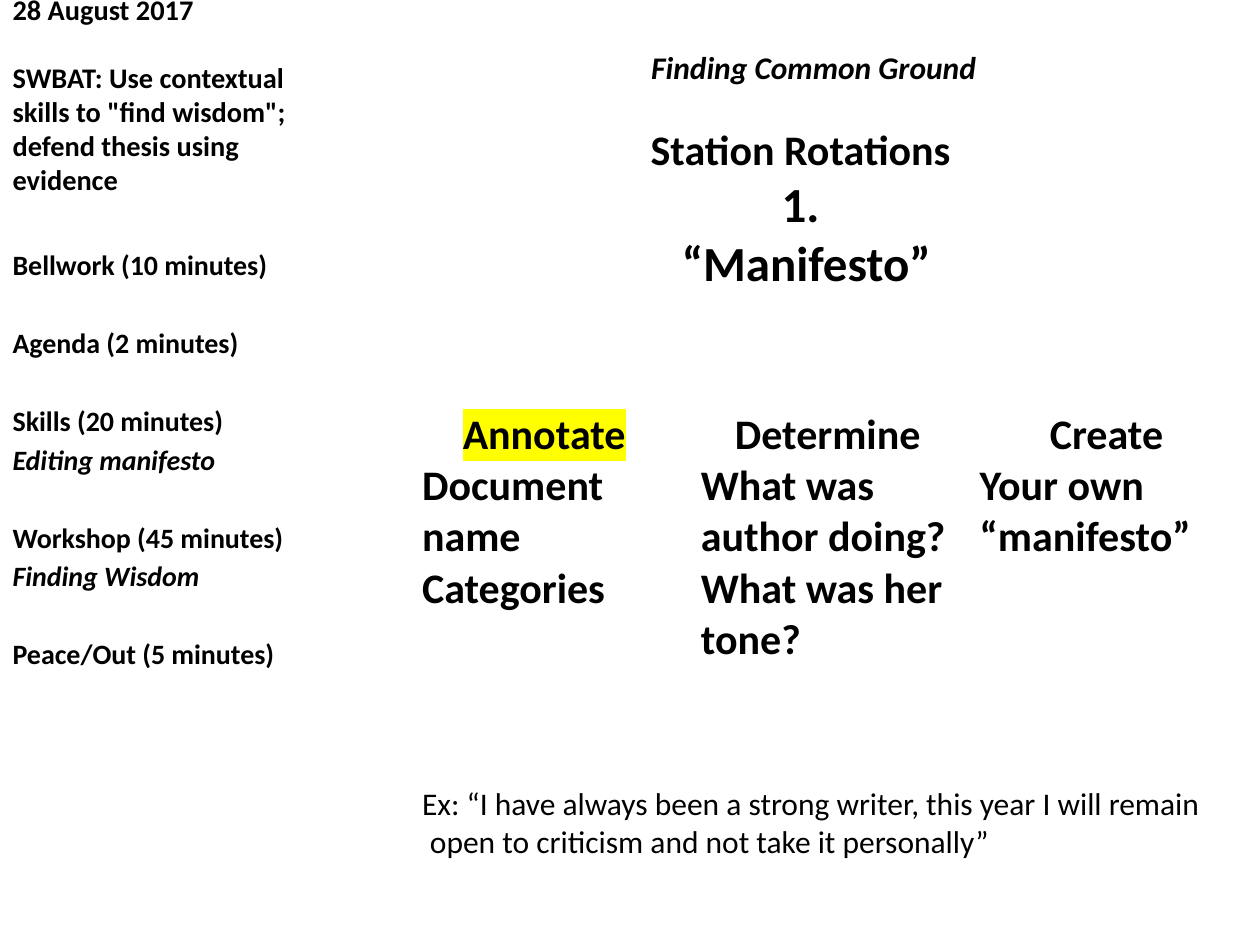
from lxml import etree
from pptx import Presentation
from pptx.dml.color import RGBColor
from pptx.enum.shapes import MSO_SHAPE
from pptx.enum.text import MSO_ANCHOR, MSO_AUTO_SIZE, PP_ALIGN
from pptx.oxml.ns import qn
from pptx.util import Pt

LEFT = PP_ALIGN.LEFT
CENTER = PP_ALIGN.CENTER
TOP = MSO_ANCHOR.TOP
BOTTOM = MSO_ANCHOR.BOTTOM
NO_AUTOFIT = MSO_AUTO_SIZE.NONE
RECTANGLE = MSO_SHAPE.RECTANGLE
CONTENT_WITH_CAPTION = 7


def color(value):
    return RGBColor.from_string(value)


class SlideBuilder:
    font_name = "Calibri"
    ink = "000000"
    paper = "FFFFFF"
    marker = "FFFF00"

    def __init__(self, slide):
        self.slide = slide

    def place(self, shape, left, top, width, height):
        shape.left, shape.top = Pt(left), Pt(top)
        shape.width, shape.height = Pt(width), Pt(height)

    def run(self, paragraph, text, size, bold=True, italic=False, highlight=False):
        run = paragraph.add_run()
        run.text = text
        font = run.font
        font.size, font.bold, font.italic = Pt(size), bold, italic
        font.color.rgb = color(self.ink)
        font.name = self.font_name
        if highlight:
            mark = etree.Element(qn("a:highlight"))
            etree.SubElement(mark, qn("a:srgbClr"), val=self.marker)
            run.font._element.find(qn("a:latin")).addprevious(mark)

    def paragraph(self, frame, index, align=LEFT, before=0):
        paragraph = frame.add_paragraph() if index else frame.paragraphs[0]
        paragraph.alignment = align
        paragraph.space_before = Pt(before)
        return paragraph

    def plain(self, paragraph, hanging=0):
        properties = paragraph._p.get_or_add_pPr()
        properties.set("marL", str(Pt(hanging)))
        properties.set("indent", str(-Pt(hanging)))
        etree.SubElement(properties, qn("a:buNone"))

    def frame(self, shape, anchor=TOP):
        frame = shape.text_frame
        frame.word_wrap = True
        frame.auto_size = NO_AUTOFIT
        frame.vertical_anchor = anchor
        return frame

    def title(self, box, lines, size, gap, bottom):
        shape = self.slide.shapes.title
        self.place(shape, *box)
        frame = self.frame(shape, BOTTOM)
        frame.margin_top, frame.margin_bottom = 0, Pt(bottom)
        for index, text in enumerate(lines):
            paragraph = self.paragraph(frame, index, before=gap if index else 0)
            self.run(paragraph, text, size)

    def body(self, placeholder, box, items, size, filled=False):
        shape = self.slide.placeholders[placeholder]
        self.place(shape, *box)
        if filled:
            shape.fill.solid()
            shape.fill.fore_color.rgb = color(self.paper)
        frame = self.frame(shape)
        for index, (text, before, align, bold, italic, hanging) in enumerate(items):
            paragraph = self.paragraph(frame, index, align, before)
            self.plain(paragraph, hanging)
            self.run(paragraph, text, size, bold, italic)

    def outlined_box(self, box, lines):
        shape = self.slide.shapes.add_shape(RECTANGLE, *map(Pt, box))
        shape.shadow.inherit = False
        shape.fill.background()
        shape.line.color.rgb = color(self.paper)
        shape.line.width = Pt(0.25)
        frame = self.frame(shape)
        for index, (text, size) in enumerate(lines):
            self.run(self.paragraph(frame, index, CENTER), text, size)

    def borders(self, cell):
        properties = cell._tc.get_or_add_tcPr()
        sides = (("lnL", 1), ("lnR", 1), ("lnT", 1), ("lnB", 3))
        for position, (side, width) in enumerate(sides):
            line = etree.Element(qn(f"a:{side}"), w=str(Pt(width)))
            fill = etree.SubElement(line, qn("a:solidFill"))
            etree.SubElement(fill, qn("a:srgbClr"), val=self.paper)
            properties.insert(position, line)

    def table(self, box, columns, size):
        graphic = self.slide.shapes.add_table(1, len(columns), *map(Pt, box))
        table = graphic.table
        table.first_row = table.horz_banding = False
        for cell, (heading, marked, lines) in zip(table.rows[0].cells, columns):
            cell.fill.background()
            self.borders(cell)
            frame = cell.text_frame
            paragraph = self.paragraph(frame, 0, CENTER)
            self.run(paragraph, heading, size, highlight=marked)
            if marked:
                self.run(paragraph, " ", size)
            for index, text in enumerate(lines, 1):
                self.run(self.paragraph(frame, index), text, size)


def main():
    presentation = Presentation()
    presentation.slide_width, presentation.slide_height = Pt(720), Pt(540)
    layout = presentation.slide_layouts[CONTENT_WITH_CAPTION]
    builder = SlideBuilder(presentation.slides.add_slide(layout))

    builder.title(
        (0, 0, 204, 135),
        [
            "28 August 2017",
            'SWBAT: Use contextual skills to "find wisdom"; defend thesis using evidence',
        ],
        size=16.2, gap=19.5, bottom=23,
    )

    lesson = [
        ("Finding Common Ground", 0, CENTER, True, True, 0),
        ("Ex: “I have always been a strong writer, this year I will remain "
         "open to criticism and not take it personally”", 399, LEFT, False, False, 4.5),
    ]
    builder.body(1, (234, 24, 462, 516), lesson, size=18, filled=True)

    near, far = 2.9, 25.3
    agenda = [
        ("Bellwork (10 minutes)", 0, False),
        ("Agenda (2 minutes)", far, False),
        ("Skills (20 minutes)", far, False),
        ("Editing manifesto", near, True),
        ("Workshop (45 minutes)", far, False),
        ("Finding Wisdom", near, True),
        ("Peace/Out (5 minutes)", far, False),
    ]
    items = [(text, before, LEFT, True, italic, 0) for text, before, italic in agenda]
    builder.body(2, (0, 138, 198, 390), items, size=16)

    builder.outlined_box(
        (235.5, 67, 444, 126),
        [("Station Rotations", 24), ("1.", 28), (" “Manifesto”", 28)],
    )

    builder.table(
        (234, 230.4, 478, 151.2),
        [
            ("Annotate", True, ["Document name", "Categories"]),
            ("Determine", False, ["What was author doing? What was her tone?"]),
            ("Create", False, ["Your own “manifesto”"]),
        ],
        size=24,
    )

    presentation.save("out.pptx")


if __name__ == "__main__":
    main()
